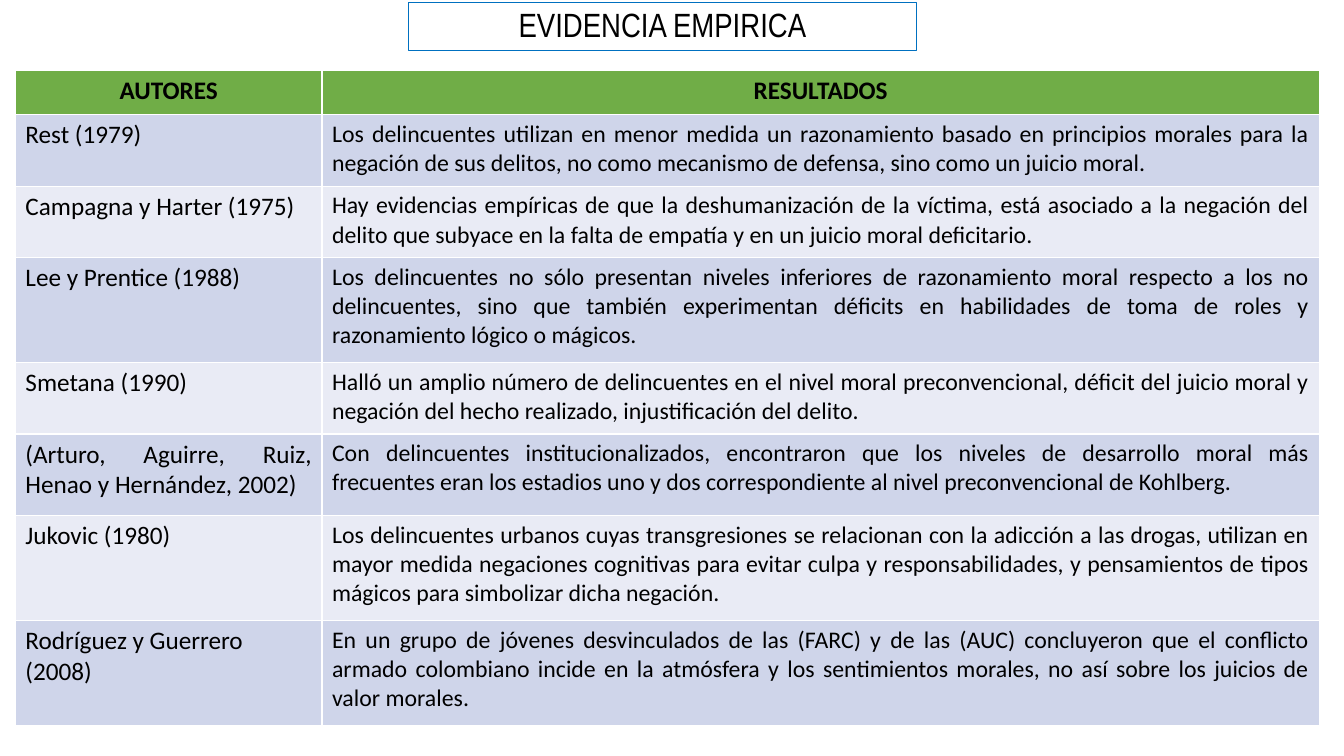
"""Build the slide that lists empirical evidence by author."""
from pptx import Presentation
from pptx.dml.color import RGBColor
from pptx.enum.text import MSO_ANCHOR, PP_ALIGN
from pptx.util import Pt

COLORS = {
    "text": "000000",
    "title_line": "0070C0",
    "header": "70AD47",
    "odd_row": "CFD5EA",
    "even_row": "E9EBF5",
}
LEFT, CENTER, JUSTIFY = PP_ALIGN.LEFT, PP_ALIGN.CENTER, PP_ALIGN.JUSTIFY

HEADINGS = ("AUTORES", "RESULTADOS")
STUDIES = [
    ("Rest (1979)", LEFT, 51,
     "Los delincuentes utilizan en menor medida un razonamiento basado en principios morales "
     "para la negación de sus delitos, no como mecanismo de defensa, sino como un juicio moral."),
    ("Campagna y Harter (1975)", JUSTIFY, 51,
     "Hay evidencias empíricas de que la deshumanización de la víctima, está asociado a la "
     "negación del delito que subyace en la falta de empatía y en un juicio moral deficitario."),
    ("Lee y Prentice (1988)", LEFT, 75,
     "Los delincuentes no sólo presentan niveles inferiores de razonamiento moral respecto a "
     "los no delincuentes, sino que también experimentan déficits en habilidades de toma de "
     "roles y razonamiento lógico o mágicos."),
    ("Smetana (1990)", LEFT, 51,
     "Halló un amplio número de delincuentes en el nivel moral preconvencional, déficit del "
     "juicio moral y negación del hecho realizado, injustificación del delito."),
    ("(Arturo, Aguirre, Ruiz, Henao y Hernández, 2002)", JUSTIFY, 58.5,
     "Con delincuentes institucionalizados, encontraron que los niveles de desarrollo moral más "
     "frecuentes eran los estadios uno y dos correspondiente al nivel preconvencional de Kohlberg."),
    ("Jukovic (1980)", LEFT, 75,
     "Los delincuentes urbanos cuyas transgresiones se relacionan con la adicción a las drogas, "
     "utilizan en mayor medida negaciones cognitivas para evitar culpa y responsabilidades, y "
     "pensamientos de tipos mágicos para simbolizar dicha negación."),
    ("Rodríguez y Guerrero (2008)", LEFT, 75,
     "En un grupo de jóvenes desvinculados de las (FARC) y de las (AUC) concluyeron que el "
     "conflicto armado colombiano incide en la atmósfera y los sentimientos morales, no así "
     "sobre los juicios de valor morales."),
]


def format_paragraph(paragraph, font_name, size, align, bold=False):
    paragraph.alignment = align
    paragraph.font.name = font_name
    paragraph.font.size = Pt(size)
    paragraph.font.bold = bold
    paragraph.font.color.rgb = RGBColor.from_string(COLORS["text"])


def fill_cell(cell, text, fill, size, align, bold=False):
    cell.text = text
    cell.fill.solid()
    cell.fill.fore_color.rgb = RGBColor.from_string(COLORS[fill])
    format_paragraph(cell.text_frame.paragraphs[0], "Calibri", size, align, bold)


presentation = Presentation()
presentation.slide_width, presentation.slide_height = Pt(960), Pt(540)
slide = presentation.slides.add_slide(presentation.slide_layouts[5])

title = slide.shapes.title
title.left, title.top, title.width, title.height = Pt(291.6), Pt(1.8), Pt(363.2), Pt(34)
title.line.color.rgb = RGBColor.from_string(COLORS["title_line"])
title.line.width = Pt(0.75)
title.text_frame.text = "EVIDENCIA EMPIRICA"
title.text_frame.vertical_anchor = MSO_ANCHOR.MIDDLE
heading = title.text_frame.paragraphs[0]
heading.line_spacing = 0.9
format_paragraph(heading, "Arial Narrow", 24, CENTER)

evidence = slide.shapes.add_table(
    len(STUDIES) + 1, 2, Pt(11), Pt(50.5), Pt(931.5), Pt(468)).table
evidence.columns[0].width, evidence.columns[1].width = Pt(219), Pt(712.5)

evidence.rows[0].height = Pt(31.5)
for column, label in enumerate(HEADINGS):
    fill_cell(evidence.cell(0, column), label, "header", 18, CENTER, bold=True)

for row, (authors, authors_align, height, result) in enumerate(STUDIES, start=1):
    band = "odd_row" if row % 2 else "even_row"
    evidence.rows[row].height = Pt(height)
    fill_cell(evidence.cell(row, 0), authors, band, 18, authors_align)
    fill_cell(evidence.cell(row, 1), result, band, 17, JUSTIFY)

presentation.save("out.pptx")
